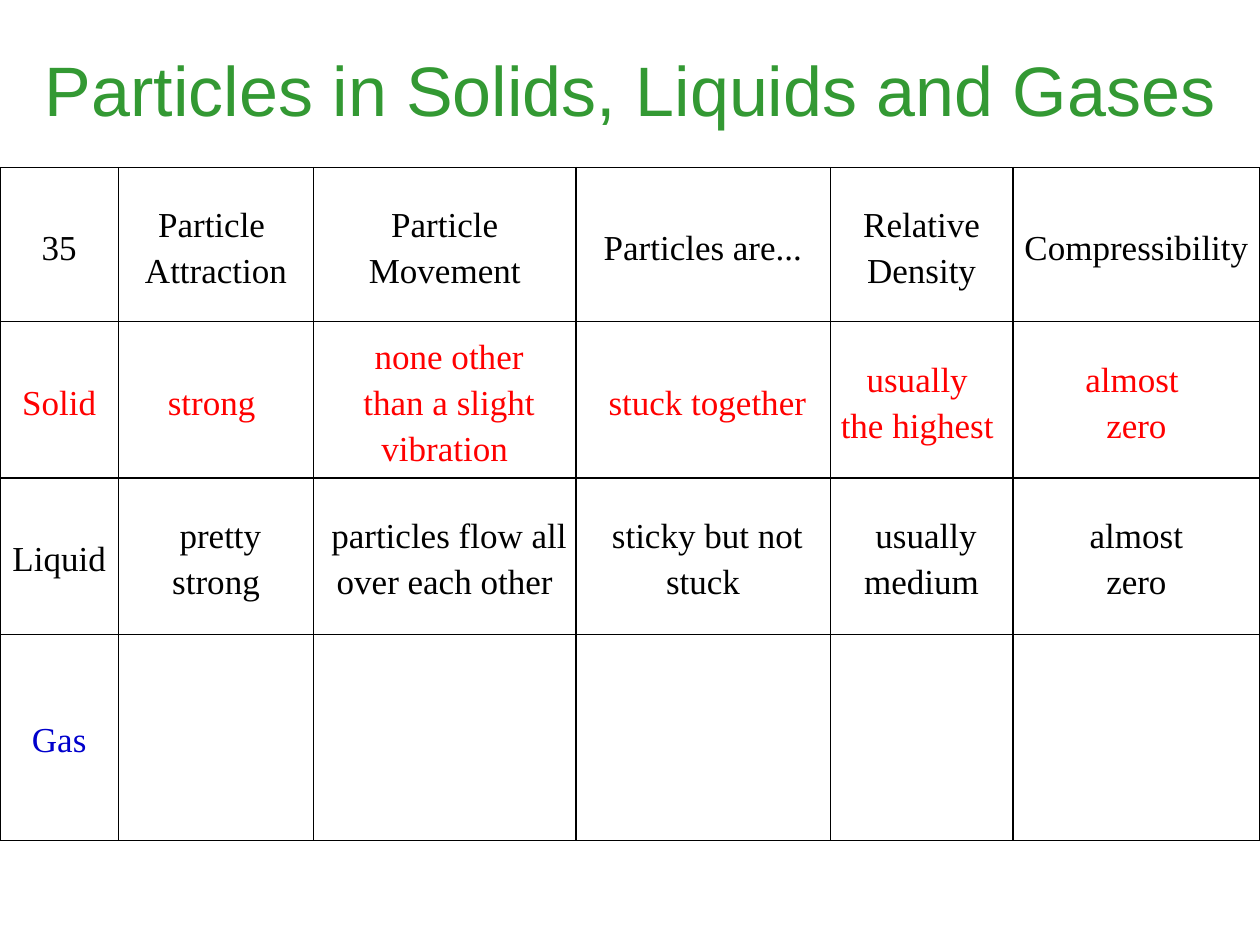
from dataclasses import dataclass

from lxml import etree
from pptx import Presentation
from pptx import util as u
from pptx.dml.color import RGBColor
from pptx.enum import text
from pptx.oxml import ns


@dataclass(frozen=True)
class Theme:
    """Colours, fonts and sizes of the slide."""
    title_font: str = "Arial"
    body_font: str = "Times New Roman"
    title_size: int = 40
    body_size: int = 20
    title: str = "339933"
    black: str = "000000"
    solid: str = "FF0000"
    gas: str = "0000CC"
    paper: str = "FFFFFF"
    border: float = 1
    inset: float = 0.04


THEME = Theme()
COLUMNS = (0.94, 1.55, 2.08, 2.02, 1.45, 1.96)
ROWS = (
    (1.22, THEME.black, ("35", "Particle |Attraction", "Particle|Movement",
                         "Particles are...", "Relative|Density", "Compressibility")),
    (1.24, THEME.solid, ("Solid", "strong ", " none other| than a slight vibration",
                         " stuck together", "usually |the highest ", "almost |zero")),
    (1.24, THEME.black, ("Liquid", " pretty strong", " particles flow all over each other",
                         " sticky but not stuck", " usually medium", " almost |zero")),
    (1.63, THEME.gas, ("Gas", "", "", "", "", "")),
)


def add_run(paragraph, words, font, size, color):
    """Add one formatted run to a paragraph."""
    run = paragraph.add_run()
    run.text = words
    run.font.name = font
    run.font.size = u.Pt(size)
    run.font.color.rgb = RGBColor.from_string(color)


def set_borders(cell):
    """Draw a solid line on all four sides of a cell."""
    properties = cell._tc.get_or_add_tcPr()
    for index, side in enumerate(("lnL", "lnR", "lnT", "lnB")):
        line = etree.Element(ns.qn(f"a:{side}"), w=str(u.Pt(THEME.border)))
        fill = etree.SubElement(line, ns.qn("a:solidFill"))
        etree.SubElement(fill, ns.qn("a:srgbClr"), val=THEME.black)
        properties.insert(index, line)


def fill_cell(cell, words, color):
    """Format a cell and write its text, with a bar marking a line break."""
    cell.fill.solid()
    cell.fill.fore_color.rgb = RGBColor.from_string(THEME.paper)
    set_borders(cell)
    cell.vertical_anchor = text.MSO_ANCHOR.MIDDLE
    cell.margin_left = cell.margin_right = u.Inches(THEME.inset)
    cell.margin_top = cell.margin_bottom = u.Inches(THEME.inset)
    if not words:
        return
    paragraph = cell.text_frame.paragraphs[0]
    paragraph.alignment = text.PP_ALIGN.CENTER
    paragraph.line_spacing = 1.19
    paragraph.space_after = u.Pt(6)
    for index, line in enumerate(words.split("|")):
        if index:
            paragraph.add_line_break()
        add_run(paragraph, line, THEME.body_font, THEME.body_size, color)


def add_title(slide, left, top, width, height):
    """Place the slide title in its placeholder."""
    title = slide.shapes.title
    title.left, title.top, title.width, title.height = left, top, width, height
    frame = title.text_frame
    frame.auto_size = text.MSO_AUTO_SIZE.NONE
    frame.vertical_anchor = text.MSO_ANCHOR.MIDDLE
    paragraph = frame.paragraphs[0]
    paragraph.alignment = text.PP_ALIGN.CENTER
    add_run(paragraph, "Particles in Solids, Liquids and Gases",
            THEME.title_font, THEME.title_size, THEME.title)


def add_states_table(slide, left, top, width, height):
    """Place the table comparing the states of matter."""
    table = slide.shapes.add_table(len(ROWS), len(COLUMNS), left, top, width, height).table
    table.first_row = table.horz_banding = False
    for column, share in zip(table.columns, COLUMNS):
        column.width = int(width * share / sum(COLUMNS))
    total = sum(row[0] for row in ROWS)
    for row, (share, color, entries) in zip(table.rows, ROWS):
        row.height = int(height * share / total)
        for cell, words in zip(row.cells, entries):
            fill_cell(cell, words, color)


def main():
    """Build and save the slide."""
    presentation = Presentation()
    presentation.slide_width, presentation.slide_height = u.Inches(10), u.Inches(7.5)
    slide = presentation.slides.add_slide(presentation.slide_layouts[5])
    width = presentation.slide_width
    add_title(slide, 0, u.Inches(0.32), width, u.Inches(0.77))
    add_states_table(slide, 0, u.Inches(1.33), width, u.Inches(5.34))
    presentation.save("out.pptx")


if __name__ == "__main__":
    main()
